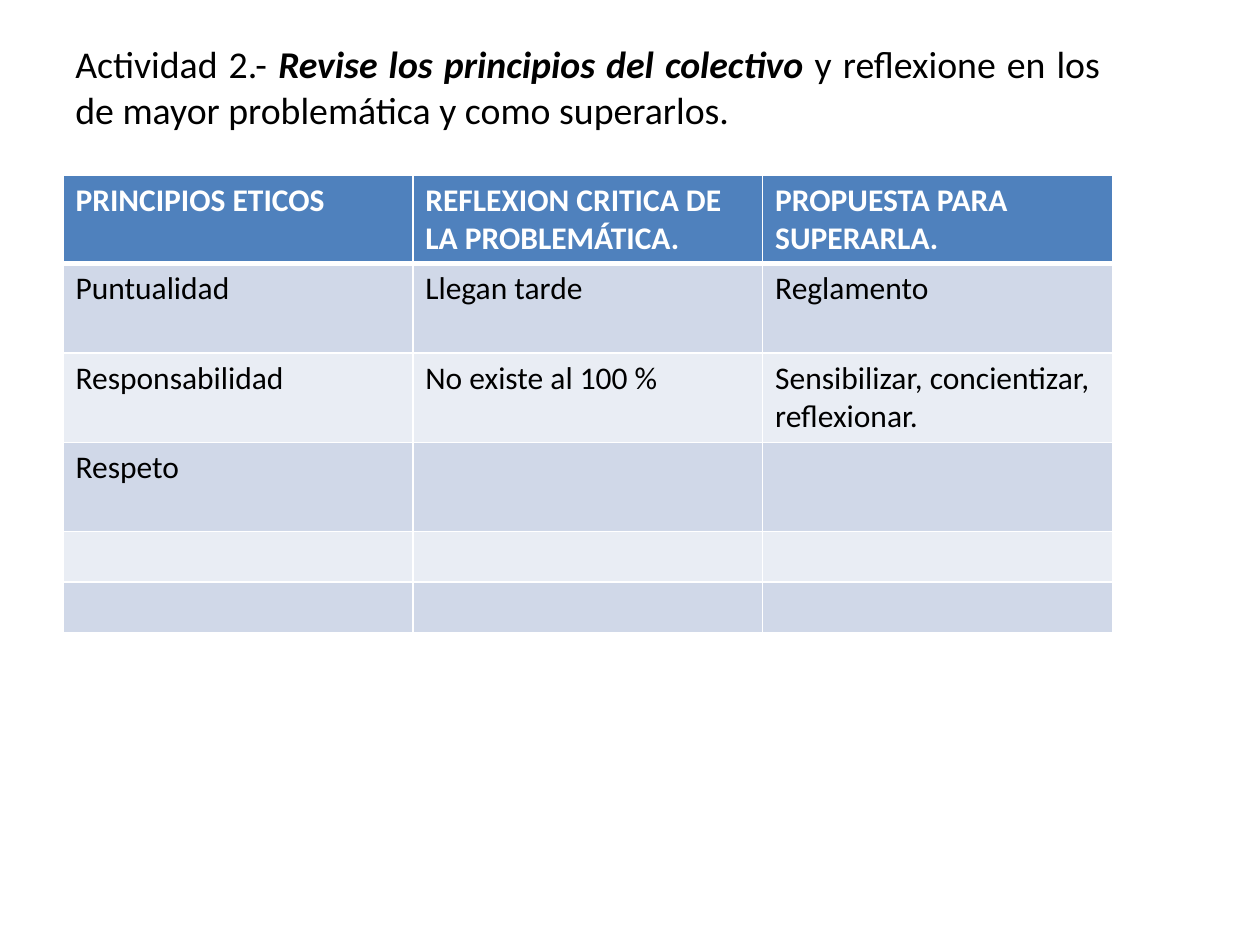
from dataclasses import dataclass

from lxml.etree import SubElement
from pptx import Presentation
from pptx.dml.color import RGBColor
from pptx.enum.text import MSO_ANCHOR, PP_ALIGN
from pptx.oxml.ns import qn
from pptx.util import Inches, Pt


@dataclass(frozen=True)
class Theme:
    font: str = "Calibri"
    title_size: float = 21.6
    table_size: float = 18
    text: str = "000000"
    header_text: str = "FFFFFF"
    header_fill: str = "4F81BD"
    bands: tuple = ("D0D8E8", "E9EDF4")
    border: str = "FFFFFF"
    border_width: float = 1
    header_rule: float = 3


TITLE = [
    ("Actividad 2.- ", False),
    ("Revise los principios del colectivo", True),
    (" y reflexione en los de mayor problemática y como superarlos.", False),
]
ROWS = [
    ("PRINCIPIOS ETICOS", "REFLEXION CRITICA DE LA PROBLEMÁTICA.", "PROPUESTA PARA SUPERARLA."),
    ("Puntualidad", "Llegan tarde", "Reglamento"),
    ("Responsabilidad", "No existe al 100 %", "Sensibilizar, concientizar, reflexionar."),
    ("Respeto", "", ""),
    ("", "", ""),
    ("", "", ""),
]
ROW_HEIGHTS = [0.7, 0.71, 0.71, 0.71, 0.4, 0.4]
LEFT, WIDTH = 0.5, 8.33


def add_span(para, text, *, font, size, color, bold=False, italic=False):
    span = para.add_run()
    span.text = text
    span.font.name = font
    span.font.size = Pt(size)
    span.font.color.rgb = RGBColor.from_string(color)
    span.font.bold = bold
    span.font.italic = italic


def set_borders(cell, color, widths):
    """Draw the cell's sides; widths maps L, R, T and B, in that order, to points."""
    properties = cell._tc.get_or_add_tcPr()
    for side, width in widths.items():
        line = SubElement(properties, qn(f"a:ln{side}"), w=str(Pt(width)))
        fill = SubElement(line, qn("a:solidFill"))
        SubElement(fill, qn("a:srgbClr"), val=color)


class SlideBuilder:
    def __init__(self, slide, theme):
        self.slide = slide
        self.theme = theme

    def title(self, spans, left, top, width, height):
        theme = self.theme
        box = self.slide.shapes.add_textbox(
            Inches(left), Inches(top), Inches(width), Inches(height))
        frame = box.text_frame
        frame.word_wrap = True
        frame.vertical_anchor = MSO_ANCHOR.MIDDLE
        para = frame.paragraphs[0]
        para.alignment = PP_ALIGN.JUSTIFY
        for text, strong in spans:
            add_span(para, text, font=theme.font, size=theme.title_size,
                     color=theme.text, bold=strong, italic=strong)

    def table(self, rows, heights, left, top, width):
        columns = len(rows[0])
        table = self.slide.shapes.add_table(
            len(rows), columns, Inches(left), Inches(top),
            Inches(width), Inches(sum(heights))).table
        for column in table.columns:
            column.width = Inches(width / columns)
        for index, (texts, height) in enumerate(zip(rows, heights)):
            table.rows[index].height = Inches(height)
            for cell, text in zip(table.rows[index].cells, texts):
                self.cell(cell, text, index)

    def cell(self, cell, text, row):
        theme = self.theme
        header = row == 0
        thin, thick = theme.border_width, theme.header_rule
        set_borders(cell, theme.border, {
            "L": thin,
            "R": thin,
            "T": thick if row == 1 else thin,
            "B": thick if header else thin,
        })
        color = theme.header_fill if header else theme.bands[(row - 1) % 2]
        cell.fill.solid()
        cell.fill.fore_color.rgb = RGBColor.from_string(color)
        if text:
            add_span(cell.text_frame.paragraphs[0], text, font=theme.font,
                     size=theme.table_size, bold=header,
                     color=theme.header_text if header else theme.text)


def main():
    deck = Presentation()
    deck.slide_width, deck.slide_height = Inches(10), Inches(7.5)
    page = SlideBuilder(deck.slides.add_slide(deck.slide_layouts[6]), Theme())
    page.title(TITLE, LEFT, 0.3, WIDTH, 0.77)
    page.table(ROWS, ROW_HEIGHTS, LEFT, 1.39, WIDTH)
    deck.save("out.pptx")


if __name__ == "__main__":
    main()
